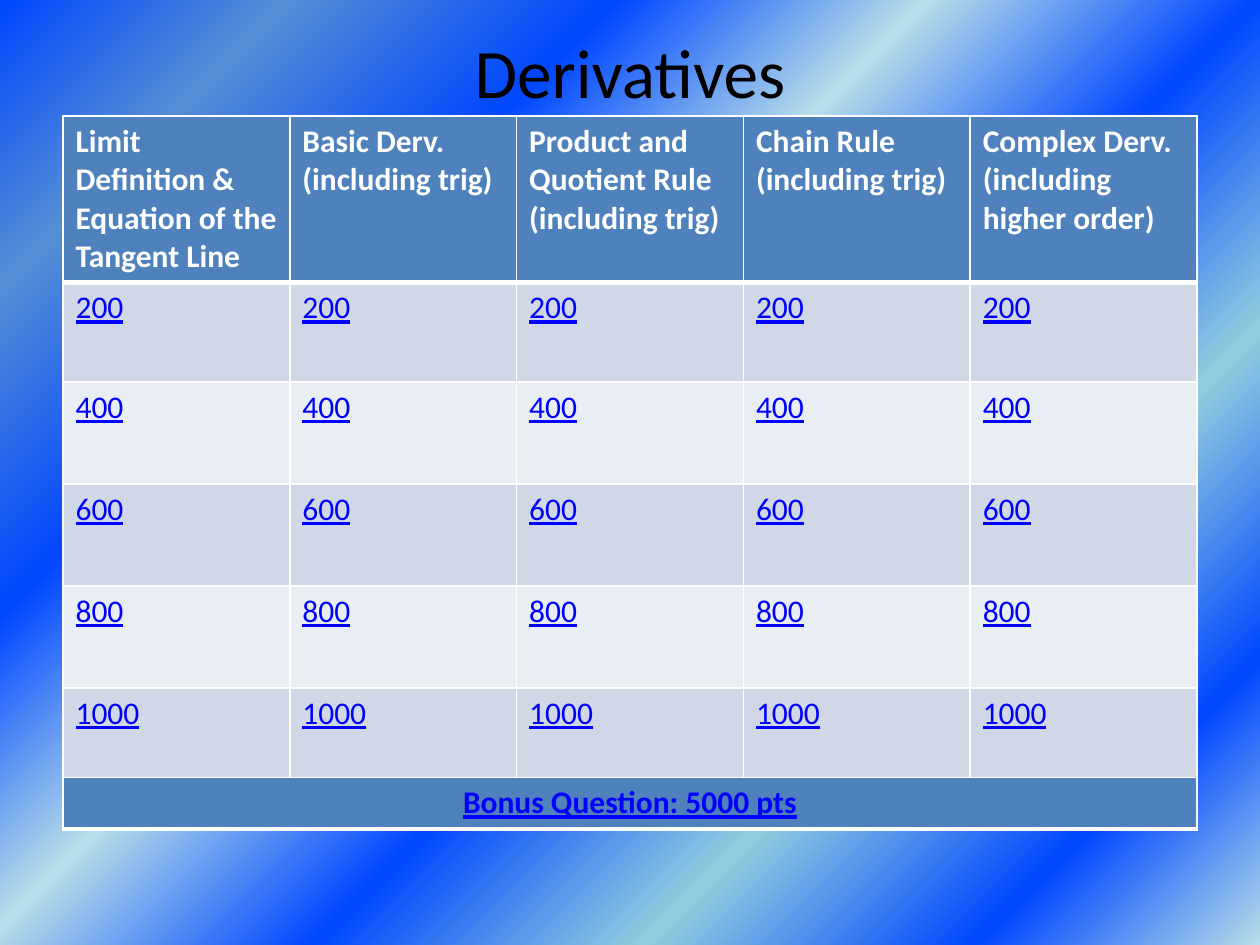
from lxml.etree import SubElement
from pptx import Presentation
from pptx.dml.color import RGBColor
from pptx.enum.text import MSO_ANCHOR, PP_ALIGN
from pptx.oxml.ns import qn
from pptx.util import Inches, Pt

COLORS = {
    "title": "000000",
    "header": "4F81BD",
    "header_text": "FFFFFF",
    "odd_row": "D0D8E8",
    "even_row": "E9EDF4",
    "points": "0000FF",
    "border": "FFFFFF",
}
BACKGROUND_STOPS = [
    (0, "B7DEE8"), (13, "0047FF"), (28, "93CDDD"), (43, "0047FF"),
    (58, "B7DEE8"), (72, "0047FF"), (87, "558ED5"), (100, "0047FF"),
]
CATEGORIES = [
    "Limit Definition & Equation of the Tangent Line",
    "Basic Derv. (including trig)",
    "Product and Quotient Rule (including trig)",
    "Chain Rule (including trig)",
    "Complex Derv. (including higher order)",
]
POINTS = [200, 400, 600, 800, 1000]
ROW_HEIGHTS = [1.31, 0.79, 0.81, 0.81, 0.81, 0.98]
LEFT, WIDTH = 0.5, 9

TITLE_FORMAT = {"size": Pt(39.6), "bold": False}
HEADER_FORMAT = {"size": Pt(18), "bold": True}
POINTS_FORMAT = {"size": Pt(18), "bold": False, "underline": True}
BONUS_FORMAT = {"size": Pt(18), "bold": True, "underline": True}


def set_text(text_frame, text, color, font_format, alignment=PP_ALIGN.LEFT):
    paragraph = text_frame.paragraphs[0]
    paragraph.alignment = alignment
    run = paragraph.add_run()
    run.text = text
    run.font.name = "Calibri"
    run.font.color.rgb = RGBColor.from_string(COLORS[color])
    for name, value in font_format.items():
        setattr(run.font, name, value)


def set_background(slide):
    fill = slide.background.fill
    fill.solid()
    properties = slide.background._cSld.bg.bgPr
    properties.remove(properties.find(qn("a:solidFill")))
    gradient = properties.makeelement(qn("a:gradFill"), {"rotWithShape": "1"})
    properties.insert(0, gradient)
    stops = SubElement(gradient, qn("a:gsLst"))
    for position, color in BACKGROUND_STOPS:
        stop = SubElement(stops, qn("a:gs"), pos=str(position * 1000))
        SubElement(stop, qn("a:srgbClr"), val=color)
    circle = SubElement(gradient, qn("a:path"), {"path": "circle"})
    SubElement(circle, qn("a:fillToRect"), l="100000", t="100000")


def set_borders(cell, top=1, bottom=1):
    properties = cell._tc.get_or_add_tcPr()
    for side, width in {"L": 1, "R": 1, "T": top, "B": bottom}.items():
        line = SubElement(properties, qn(f"a:ln{side}"), w=str(Pt(width)))
        fill = SubElement(line, qn("a:solidFill"))
        SubElement(fill, qn("a:srgbClr"), val=COLORS["border"])


def set_fill(cell, color):
    cell.fill.solid()
    cell.fill.fore_color.rgb = RGBColor.from_string(COLORS[color])


def add_title(slide, text):
    title = slide.shapes.title
    title.left, title.top = Inches(LEFT), Inches(0.3)
    title.width, title.height = Inches(WIDTH), Inches(0.53)
    title.text_frame.vertical_anchor = MSO_ANCHOR.MIDDLE
    set_text(title.text_frame, text, "title", TITLE_FORMAT, PP_ALIGN.CENTER)


def add_grid(slide, top, row_heights, column_count):
    frame = slide.shapes.add_table(
        len(row_heights), column_count, Inches(LEFT), Inches(top),
        Inches(WIDTH), Inches(sum(row_heights)))
    for row, height in zip(frame.table.rows, row_heights):
        row.height = Inches(height)
    return frame.table


def add_board(slide):
    table = add_grid(slide, 0.92, ROW_HEIGHTS, len(CATEGORIES))
    for column, category in enumerate(CATEGORIES):
        # Category heading
        heading = table.cell(0, column)
        set_borders(heading, bottom=3)
        set_fill(heading, "header")
        set_text(heading.text_frame, category, "header_text", HEADER_FORMAT)
        # Point values below it
        for row, points in enumerate(POINTS, start=1):
            cell = table.cell(row, column)
            set_borders(cell, top=3 if row == 1 else 1)
            set_fill(cell, "odd_row" if row % 2 else "even_row")
            set_text(cell.text_frame, str(points), "points", POINTS_FORMAT)


def add_bonus(slide):
    cell = add_grid(slide, 6.17, [0.41], 1).cell(0, 0)
    set_borders(cell, bottom=3)
    set_fill(cell, "header")
    set_text(cell.text_frame, "Bonus Question: 5000 pts", "points",
             BONUS_FORMAT, PP_ALIGN.CENTER)


def main():
    presentation = Presentation()
    presentation.slide_width = Inches(10)
    presentation.slide_height = Inches(7.5)
    slide = presentation.slides.add_slide(presentation.slide_layouts[5])
    set_background(slide)
    add_title(slide, "Derivatives")
    add_board(slide)
    add_bonus(slide)
    presentation.save("out.pptx")


if __name__ == "__main__":
    main()
